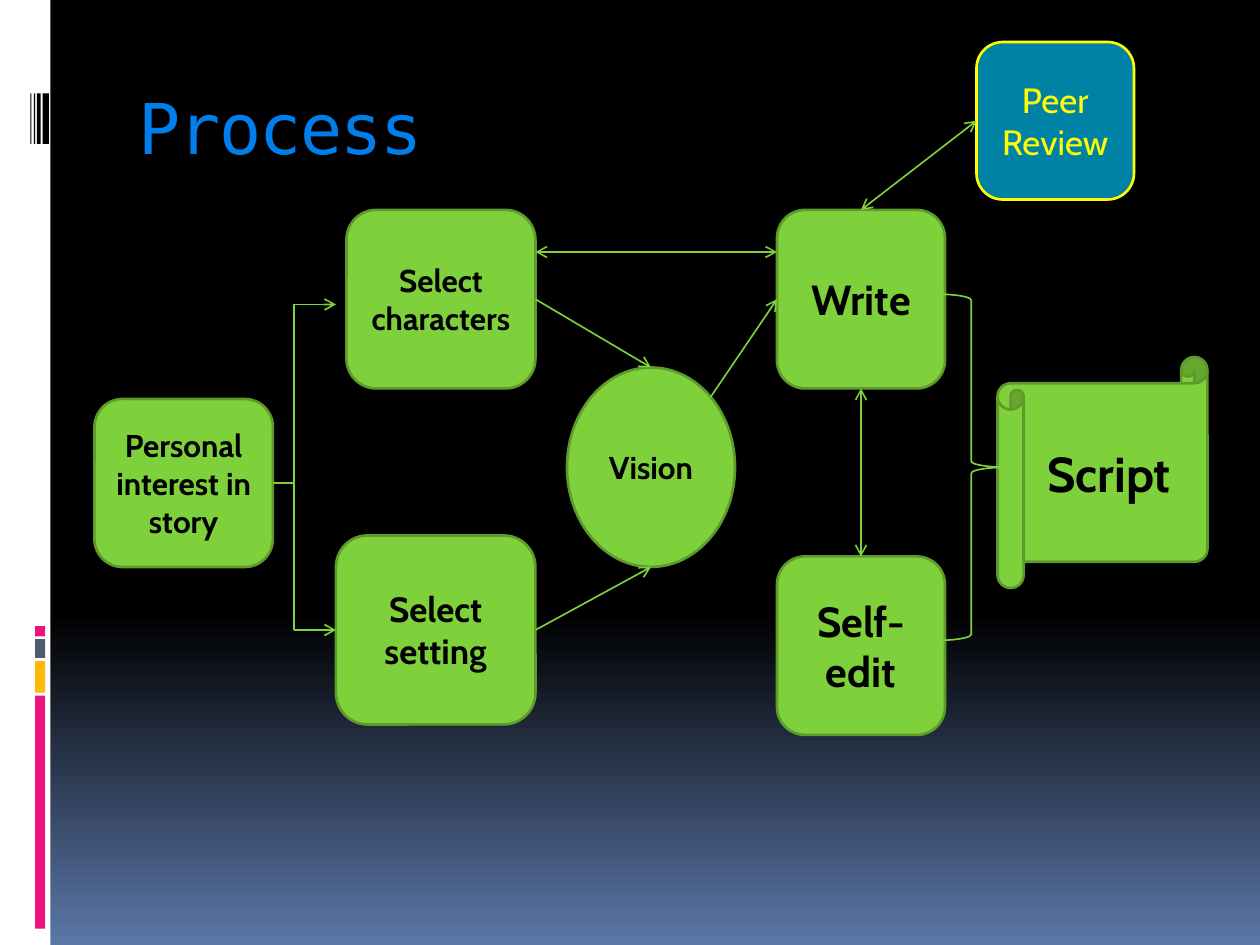
from copy import deepcopy
from dataclasses import dataclass

from lxml import etree
from pptx import Presentation
from pptx import util as u
from pptx.dml.color import RGBColor
from pptx.enum import shapes, text
from pptx.oxml.ns import qn

MSO = shapes.MSO_SHAPE


@dataclass(frozen=True)
class Theme:
    font: str = "Cabin"
    title_font: str = "DejaVu Sans Mono"
    title: str = "007EEB"
    green: str = "7FD13B"
    edge: str = "5E9B2C"
    teal: str = "0082A5"
    yellow: str = "FFFF00"
    pink: str = "EA157A"
    amber: str = "FEB80A"
    slate: str = "4E5B6F"
    blue: str = "5B77A8"
    black: str = "000000"
    white: str = "FFFFFF"
    title_size: int = 40
    script_size: int = 28
    big: int = 24
    medium: int = 20
    small: int = 18
    outline: float = 1.5
    thin: float = 0.94


def rgb(value):
    return RGBColor.from_string(value)


class Slide:
    """Holds the theme and the current slide; lengths are in points."""

    def __init__(self, prs, theme):
        self.t = theme
        self.s = prs.slides.add_slide(prs.slide_layouts[5])

    def background(self, stops):
        fill = self.s.background.fill
        fill.gradient()
        fill.gradient_angle = 270
        last = list(self.s.element.iter(qn("a:gs")))[-1]
        last.addnext(deepcopy(last))
        for stop, (position, color) in zip(fill.gradient_stops, stops):
            stop.position = position
            stop.color.rgb = rgb(color)

    def run(self, p, words, font, size, color, bold=False):
        r = p.add_run()
        r.text = words
        r.font.name, r.font.size, r.font.bold = font, u.Pt(size), bold
        r.font.color.rgb = rgb(color)
        return r

    def title(self, words, box):
        sp = self.s.shapes.title
        sp.left, sp.top, sp.width, sp.height = map(u.Pt, box)
        tf = sp.text_frame
        tf.vertical_anchor = text.MSO_ANCHOR.TOP
        tf.margin_top = u.Pt(7.5)
        p = tf.paragraphs[0]
        p.alignment = text.PP_ALIGN.LEFT
        r = self.run(p, words, self.t.title_font, self.t.title_size, self.t.title)
        r.font._element.set("spc", "-100")

    def shape(self, kind, box, fill=None, line=None, width=None):
        sp = self.s.shapes.add_shape(kind, *map(u.Pt, box))
        sp.shadow.inherit = False
        if fill:
            sp.fill.solid()
            sp.fill.fore_color.rgb = rgb(fill)
        else:
            sp.fill.background()
        if line:
            sp.line.color.rgb = rgb(line)
            sp.line.width = u.Pt(width)
        else:
            sp.line.fill.background()
        return sp

    def node(self, words, box, size, kind=MSO.ROUNDED_RECTANGLE, fill=None,
             line=None, color=None, bold=True):
        t = self.t
        sp = self.shape(kind, box, fill or t.green, line or t.edge, t.outline)
        tf = sp.text_frame
        tf.word_wrap = True
        tf.vertical_anchor = text.MSO_ANCHOR.MIDDLE
        p = tf.paragraphs[0]
        p.alignment = text.PP_ALIGN.CENTER
        self.run(p, words, t.font, size, color or t.black, bold)
        return sp

    def link(self, start, end, ends=(), begin_at=None, end_at=None):
        """begin_at and end_at are (shape, side) pairs to join."""
        c = self.s.shapes.add_connector(
            shapes.MSO_CONNECTOR.STRAIGHT, *map(u.Pt, (*start, *end)))
        c.line.color.rgb = rgb(self.t.green)
        c.line.width = u.Pt(self.t.thin)
        ln = c.line._get_or_add_ln()
        for tag in ends:
            etree.SubElement(ln, qn(f"a:{tag}"), type="arrow")
        etree.SubElement(c._element.spPr, qn("a:effectLst"))
        if begin_at:
            c.begin_connect(*begin_at)
        if end_at:
            c.end_connect(*end_at)


def main():
    prs = Presentation()
    prs.slide_width, prs.slide_height = u.Pt(720), u.Pt(540)
    t = Theme()
    s = Slide(prs, t)
    s.background([(0, t.black), (0.65, t.black), (1, t.blue)])

    # Side strip with colour bars and barcode
    s.shape(MSO.RECTANGLE, (0, 0, 28.8, 540), t.white)
    for top, height, color in ((397.5, 133.2, t.pink), (377.8, 18, t.amber),
                               (365.2, 10.8, t.slate), (357.8, 5.8, t.pink)):
        s.shape(MSO.RECTANGLE, (20, top, 5.8, height), color)
    for left, width in ((24.4, 3.6), (21.1, 2.2), (19.4, 0.8), (17.4, 0.6)):
        s.shape(MSO.RECTANGLE, (left, 53.4, width, 28.8), t.black)

    s.title("Process", (72, 40.5, 612, 72))

    # Steps
    interest = s.node("Personal interest in story", (54, 228, 102, 96), t.small)
    characters = s.node("Select characters", (198, 120, 108, 102), t.small)
    setting = s.node("Select setting", (192, 306, 114, 108), t.medium)
    write = s.node("Write", (444, 120, 96, 102), t.big)
    edit = s.node("Self-edit", (444, 318, 96, 102), t.big)
    s.node("Script", (570, 204, 120, 132), t.script_size, MSO.HORIZONTAL_SCROLL)
    vision = s.node("Vision", (324, 210, 96, 114), t.small, MSO.OVAL)
    review = s.node("Peer Review", (558, 24, 90, 90), t.medium, fill=t.teal,
                    line=t.yellow, color=t.yellow, bold=False)

    # Fork from interest to characters and setting
    to, both = ("tailEnd",), ("headEnd", "tailEnd")
    s.link((168, 174), (168, 360))
    s.link((156, 276), (168, 276), begin_at=(interest, 3))
    s.link((168, 174), (192, 174), to)
    s.link((168, 360), (192, 360), to, end_at=(setting, 1))

    # Into and out of the vision
    s.link((306, 171), (372, 210), to, (characters, 3), (vision, 0))
    s.link((306, 360), (372, 324), to, (setting, 3))
    s.link((406, 227), (444, 171), to, end_at=(write, 1))

    # Two-way exchanges around writing
    s.link((492, 222), (492, 318), both, (write, 2), (edit, 0))
    s.link((492, 120), (558, 69), both, (write, 0), (review, 1))
    s.link((306, 144), (444, 144), both)

    # Brace leading to the script
    s.shape(MSO.RIGHT_BRACE, (534, 168, 42, 198), line=t.green, width=t.thin)

    prs.save("out.pptx")


if __name__ == "__main__":
    main()
